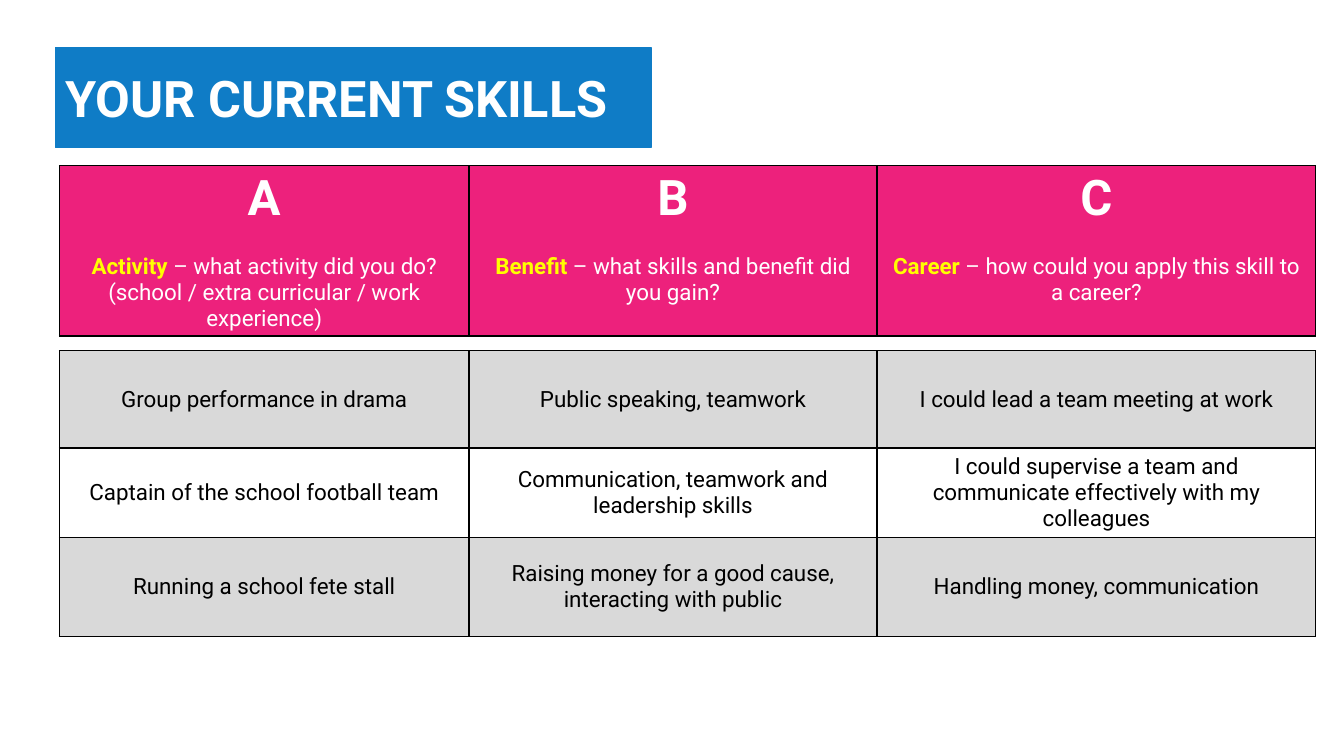
from dataclasses import dataclass

from pptx import Presentation
from pptx.dml.color import RGBColor
from pptx.enum.text import MSO_ANCHOR, MSO_AUTO_SIZE, PP_ALIGN
from pptx.oxml import parse_xml
from pptx.oxml.ns import nsdecls
from pptx.util import Pt


@dataclass(frozen=True)
class Theme:
    font: str = "Roboto"
    blue: str = "0F7CC6"
    pink: str = "ED217C"
    gray: str = "D9D9D9"
    white: str = "FFFFFF"
    black: str = "000000"
    yellow: str = "FFFF00"
    title: int = 36
    letter: int = 35
    body: int = 16


THEME = Theme()
LEFT = 42.5
COLS = (292.5, 291.5, 313.5)

HEADS = (
    ("A", "Activity", " – what activity did you do? (school / extra curricular / work experience)"),
    ("B", "Benefit", " – what skills and benefit did you gain?"),
    ("C", "Career", " – how could you apply this skill to a career?"),
)
SKILLS = (
    ("Group performance in drama", "Public speaking, teamwork",
     "I could lead a team meeting at work"),
    ("Captain of the school football team", "Communication, teamwork and leadership skills",
     "I could supervise a team and communicate effectively with my colleagues"),
    ("Running a school fete stall", "Raising money for a good cause, interacting with public",
     "Handling money, communication"),
)


def add_text(para, text, size=THEME.body, color=THEME.black, bold=False, align=PP_ALIGN.CENTER):
    para.alignment = align
    run = para.add_run()
    run.text = text
    run.font.name = THEME.font
    run.font.size = Pt(size)
    run.font.bold = bold
    run.font.color.rgb = RGBColor.from_string(color)


def paint(fill, color):
    fill.solid()
    fill.fore_color.rgb = RGBColor.from_string(color)


def style_cell(cell, color, anchor=MSO_ANCHOR.MIDDLE):
    cell.vertical_anchor = anchor
    cell.margin_left = cell.margin_right = Pt(6.75)
    cell.margin_top = cell.margin_bottom = Pt(3)
    props = cell._tc.get_or_add_tcPr()
    for side in "LRTB":
        props.append(parse_xml(
            f'<a:ln{side} {nsdecls("a")} w="{Pt(1)}"><a:solidFill>'
            f'<a:srgbClr val="{THEME.black}"/></a:solidFill></a:ln{side}>'))
    paint(cell.fill, color)


def add_grid(slide, top, rows):
    frame = slide.shapes.add_table(
        len(rows), len(COLS), Pt(LEFT), Pt(top), Pt(sum(COLS)), Pt(sum(rows)))
    table = frame.table
    table.first_row = table.horz_banding = False
    for col, width in zip(table.columns, COLS):
        col.width = Pt(width)
    for row, height in zip(table.rows, rows):
        row.height = Pt(height)
    return table


def add_title(slide, text):
    title = slide.shapes.title
    title.left, title.top, title.width, title.height = Pt(39.5), Pt(34), Pt(425.5), Pt(71.5)
    paint(title.fill, THEME.blue)
    paint(title.line.fill, THEME.blue)
    title.line.width = Pt(1)
    frame = title.text_frame
    frame.auto_size = MSO_AUTO_SIZE.NONE
    frame.word_wrap = True
    frame.vertical_anchor = MSO_ANCHOR.MIDDLE
    add_text(frame.paragraphs[0], text, size=THEME.title, color=THEME.white,
             bold=True, align=PP_ALIGN.LEFT)


def add_heads(slide):
    table = add_grid(slide, 118.5, (121.5,))
    for cell, (letter, word, rest) in zip(table.rows[0].cells, HEADS):
        style_cell(cell, THEME.pink, MSO_ANCHOR.TOP)
        frame = cell.text_frame
        add_text(frame.paragraphs[0], letter, size=THEME.letter, color=THEME.white, bold=True)
        para = frame.add_paragraph()
        para.space_before = Pt(18.75)
        add_text(para, word, color=THEME.yellow, bold=True)
        add_text(para, rest, color=THEME.white)


def add_skills(slide):
    table = add_grid(slide, 250.5, (69.5, 64, 70.5))
    for i, (row, texts) in enumerate(zip(table.rows, SKILLS)):
        for cell, text in zip(row.cells, texts):
            style_cell(cell, THEME.white if i % 2 else THEME.gray)
            add_text(cell.text_frame.paragraphs[0], text)


def main():
    deck = Presentation()
    deck.slide_width, deck.slide_height = Pt(960), Pt(540)
    # Title-only layout
    slide = deck.slides.add_slide(deck.slide_layouts[5])
    # Title bar
    add_title(slide, "YOUR CURRENT SKILLS")
    # Column heads, then the examples below them
    add_heads(slide)
    add_skills(slide)
    deck.save("out.pptx")


if __name__ == "__main__":
    main()
